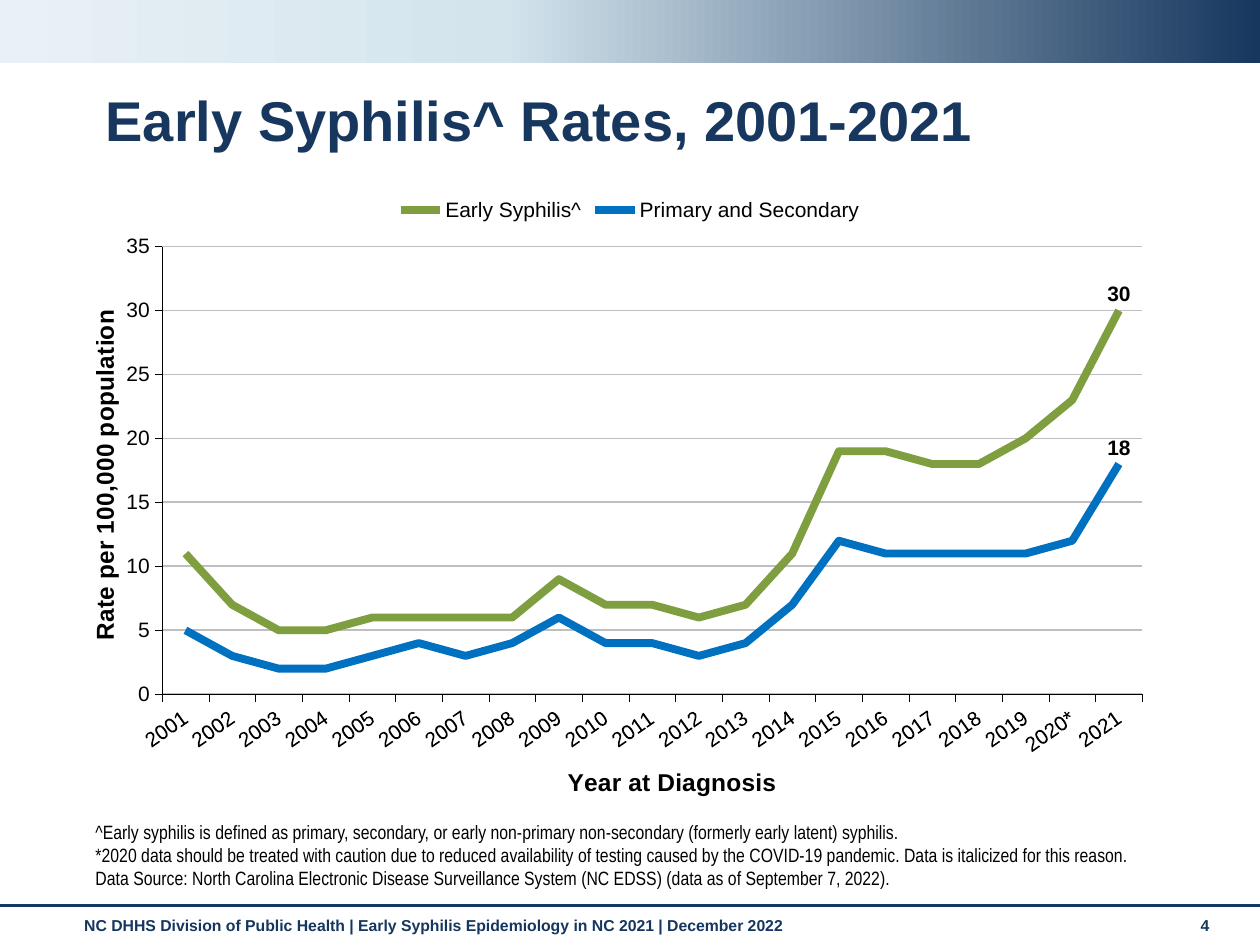
from copy import deepcopy

from lxml.etree import SubElement
from pptx import Presentation
from pptx.chart.data import CategoryChartData
from pptx.dml.color import RGBColor
from pptx.enum.chart import XL_CHART_TYPE, XL_LABEL_POSITION, XL_LEGEND_POSITION, XL_MARKER_STYLE, XL_TICK_MARK
from pptx.enum.shapes import MSO_CONNECTOR, MSO_SHAPE
from pptx.enum.text import MSO_ANCHOR
from pptx.oxml.ns import qn
from pptx.util import Inches, Pt

NAVY = RGBColor(0x17, 0x37, 0x5E)
FOOTER_NAVY = RGBColor(0x15, 0x36, 0x5E)
PALE_BLUE = RGBColor(0xD3, 0xE4, 0xED)
ICE = RGBColor(0xE9, 0xF1, 0xF6)
BLACK = RGBColor(0, 0, 0)
GRID_GRAY = RGBColor(0xBF, 0xBF, 0xBF)
GREEN = RGBColor(0x7F, 0x9E, 0x3F)
BLUE = RGBColor(0x00, 0x70, 0xC0)


def add_text(text, *, left, top, width, height, size, color, font="Arial",
             bold=False, anchor=MSO_ANCHOR.TOP, spacing=None):
    box = page.shapes.add_textbox(Inches(left), Inches(top), Inches(width), Inches(height))
    frame = box.text_frame
    frame.word_wrap = True
    frame.vertical_anchor = anchor
    for index, line in enumerate(text.split("\n")):
        para = frame.add_paragraph() if index else frame.paragraphs[0]
        para.line_spacing = spacing
        span = para.add_run()
        span.text = line
        span.font.name = font
        span.font.size = Pt(size)
        span.font.bold = bold
        span.font.color.rgb = color


def set_layout(parent, index, **values):
    for old in parent.findall(qn("c:layout")):
        parent.remove(old)
    layout = parent.makeelement(qn("c:layout"), {})
    parent.insert(index, layout)
    manual = SubElement(layout, qn("c:manualLayout"))
    for name, value in values.items():
        SubElement(manual, qn(f"c:{name}")).set("val", str(value))


deck = Presentation()
deck.slide_width = Inches(10)
deck.slide_height = Inches(7.5)
page = deck.slides.add_slide(deck.slide_layouts[6])

banner = page.shapes.add_shape(MSO_SHAPE.RECTANGLE, 0, 0, Inches(10), Inches(0.5))
banner.shadow.inherit = False
banner.line.fill.background()
banner.fill.gradient()
banner.fill.gradient_angle = 180
stop_list = banner.fill._fill._gradFill.find(qn("a:gsLst"))
stop_list.append(deepcopy(stop_list[-1]))
stops = banner.fill.gradient_stops
for stop, (position, color) in zip(stops, [(0, NAVY), (0.6, PALE_BLUE), (1, ICE)]):
    stop.position = position
    stop.color.rgb = color

rule = page.shapes.add_connector(MSO_CONNECTOR.STRAIGHT, 0, Inches(7.19), Inches(10), Inches(7.19))
rule.line.color.rgb = NAVY
rule.line.width = Pt(1.75)
SubElement(rule._element.spPr, qn("a:effectLst"))

add_text("NC DHHS Division of Public Health | Early Syphilis Epidemiology in NC 2021 | December 2022",
         left=0.57, top=7.22, width=8.74, height=0.29, size=9, color=FOOTER_NAVY, bold=True)
add_text("4", left=9.43, top=7.22, width=0.44, height=0.3, size=9, color=FOOTER_NAVY, bold=True)
add_text("Early Syphilis^ Rates, 2001-2021", left=0.74, top=0.68, width=8.58, height=0.6,
         size=32, color=NAVY, bold=True, anchor=MSO_ANCHOR.MIDDLE, spacing=0.9)

rates = CategoryChartData(number_format="#,##0")
rates.categories = ["2020*" if year == 2020 else str(year) for year in range(2001, 2022)]
rates.add_series("Early Syphilis^",
                 [11, 7, 5, 5, 6, 6, 6, 6, 9, 7, 7, 6, 7, 11, 19, 19, 18, 18, 20, 23, 30])
rates.add_series("Primary and Secondary",
                 [5, 3, 2, 2, 3, 4, 3, 4, 6, 4, 4, 3, 4, 7, 12, 11, 11, 11, 11, 12, 18])
chart = page.shapes.add_chart(XL_CHART_TYPE.LINE, Inches(0.58), Inches(1.47),
                              Inches(8.84), Inches(4.91), rates).chart
chart.has_title = False
chart.font.name = "Cambria"
chart.font.size = Pt(18)
chart.font.bold = True
chart.font.color.rgb = BLACK
chart.plots[0].vary_by_categories = False
chart.has_legend = True
chart.legend.position = XL_LEGEND_POSITION.TOP
chart.legend.include_in_layout = False

for series, color in zip(chart.plots[0].series, [GREEN, BLUE]):
    series.smooth = False
    series.marker.style = XL_MARKER_STYLE.NONE
    series.format.line.color.rgb = color
    series.format.line.width = Pt(4.5)
    label = series.points[20].data_label
    label.position = XL_LABEL_POSITION.ABOVE
    label.font.name = "Arial"
    label.font.size = Pt(12)
    label.font.bold = True
    label.font.color.rgb = BLACK
    series.data_labels.show_value = False

years, scale = chart.category_axis, chart.value_axis
for axis, title, left, top in [(years, "Year at Diagnosis", 0.44, 0.94),
                               (scale, "Rate per 100,000 population", 0.01, 0.2)]:
    axis.major_tick_mark = XL_TICK_MARK.OUTSIDE
    axis.minor_tick_mark = XL_TICK_MARK.NONE
    axis.format.line.color.rgb = BLACK
    axis.format.line.width = Pt(0.25)
    axis.axis_title.text_frame.text = title
    title_font = axis.axis_title.text_frame.paragraphs[0].runs[0].font
    title_font.name = "Arial"
    title_font.size = Pt(14)
    title_font.bold = True
    title_font.color.rgb = BLACK
    set_layout(axis.axis_title._element, 1, xMode="edge", yMode="edge", x=left, y=top)

for font in (chart.legend.font, years.tick_labels.font, scale.tick_labels.font):
    font.name = "Arial"
    font.size = Pt(12)
    font.bold = False
    font.color.rgb = BLACK

years._element.find(qn("c:txPr")).find(qn("a:bodyPr")).set("rot", "-2100000")
scale.minimum_scale = 0
scale.maximum_scale = 35
scale.major_unit = 5
scale.has_major_gridlines = True
scale.major_gridlines.format.line.color.rgb = GRID_GRAY
scale.major_gridlines.format.line.width = Pt(1)
set_layout(chart._chartSpace.chart.plotArea, 0, layoutTarget="inner", xMode="edge", yMode="edge",
           x=0.08, y=0.1, w=0.88, h=0.73)

add_text("^Early syphilis is defined as primary, secondary, or early non-primary non-secondary "
         "(formerly early latent) syphilis.\n"
         "*2020 data should be treated with caution due to reduced availability of testing caused by "
         "the COVID-19 pandemic. Data is italicized for this reason.\n"
         "Data Source: North Carolina Electronic Disease Surveillance System (NC EDSS) "
         "(data as of September 7, 2022).",
         left=0.66, top=6.57, width=8.74, height=0.54, size=11, color=BLACK,
         font="Arial Narrow", anchor=MSO_ANCHOR.BOTTOM)

deck.save("out.pptx")
